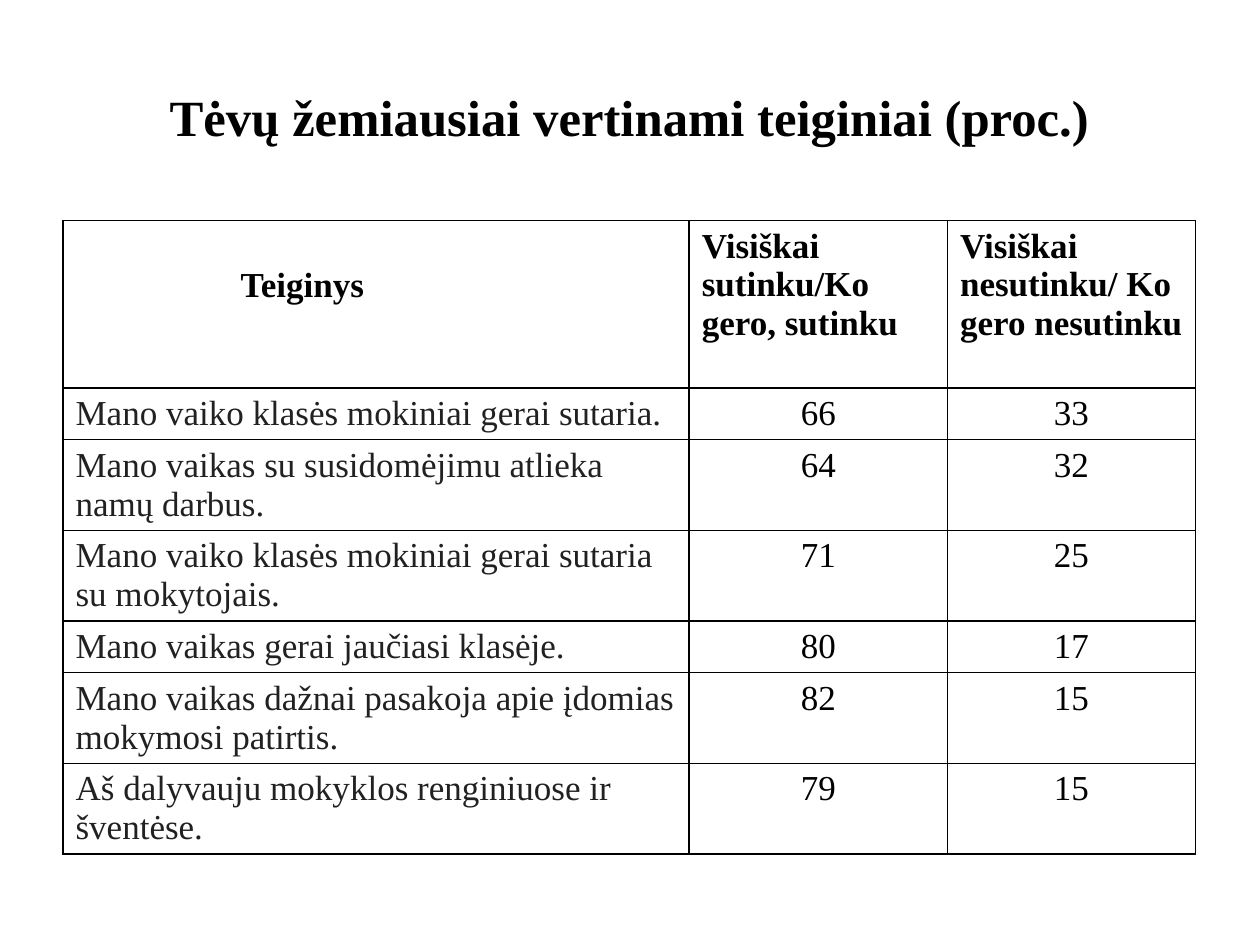
from lxml import etree
from pptx import Presentation
from pptx.dml.color import RGBColor
from pptx.enum.text import MSO_ANCHOR, PP_ALIGN
from pptx.oxml.ns import qn
from pptx.util import Inches, Pt

CENTER, LEFT = PP_ALIGN.CENTER, PP_ALIGN.LEFT
MIDDLE = MSO_ANCHOR.MIDDLE
TITLE_ONLY = 5

FONT = "Times New Roman"
COLORS = {"text": "000000", "statement": "212121", "border": "000000"}

TITLE = "Tėvų žemiausiai vertinami teiginiai (proc.)"
HEADERS = ["Teiginys", "Visiškai sutinku/Ko gero, sutinku",
           "Visiškai nesutinku/ Ko gero nesutinku"]
STATEMENTS = [
    ("Mano vaiko klasės mokiniai gerai sutaria.", 66, 33),
    ("Mano vaikas su susidomėjimu atlieka namų darbus.", 64, 32),
    ("Mano vaiko klasės mokiniai gerai sutaria su mokytojais.", 71, 25),
    ("Mano vaikas gerai jaučiasi klasėje.", 80, 17),
    ("Mano vaikas dažnai pasakoja apie įdomias mokymosi patirtis.", 82, 15),
    ("Aš dalyvauju mokyklos renginiuose ir šventėse.", 79, 15),
]
COLUMN_WIDTHS = [4.97, 2.05, 1.97]
HEADER_HEIGHT, ONE_LINE, TWO_LINES = 1.33, 0.41, 0.72
LINE_CAPACITY = 42  # characters that fit on one line of the first column


def write_text(frame, text, size, color="text", bold=False, align=LEFT):
    frame.text = text
    para = frame.paragraphs[0]
    para.alignment = align
    font = para.runs[0].font
    font.name, font.size, font.bold = FONT, Pt(size), bold
    font.color.rgb = RGBColor.from_string(COLORS[color])


def set_borders(cell):
    properties = cell._tc.get_or_add_tcPr()
    for side in ("a:lnL", "a:lnR", "a:lnT", "a:lnB"):
        line = etree.SubElement(properties, qn(side), w=str(Pt(1)))
        fill = etree.SubElement(line, qn("a:solidFill"))
        etree.SubElement(fill, qn("a:srgbClr"), val=COLORS["border"])


def fill_cell(cell, text, **style):
    set_borders(cell)
    cell.fill.background()
    write_text(cell.text_frame, text, 20, **style)


def add_title(slide):
    title = slide.shapes.title
    title.left, title.top = Inches(0.5), Inches(0.3)
    title.width, title.height = Inches(9), Inches(1.25)
    title.text_frame.vertical_anchor = MIDDLE
    write_text(title.text_frame, TITLE, 29, bold=True, align=CENTER)


def add_statement_table(slide):
    heights = [HEADER_HEIGHT] + [
        ONE_LINE if len(row[0]) < LINE_CAPACITY else TWO_LINES
        for row in STATEMENTS]
    table = slide.shapes.add_table(
        len(heights), len(COLUMN_WIDTHS), Inches(0.5), Inches(1.75),
        Inches(sum(COLUMN_WIDTHS)), Inches(sum(heights))).table
    table.first_row = table.horz_banding = False
    for column, width in zip(table.columns, COLUMN_WIDTHS):
        column.width = Inches(width)
    for row, height in zip(table.rows, heights):
        row.height = Inches(height)

    # Header row, with its first label set in and down
    for index, label in enumerate(HEADERS):
        fill_cell(table.cell(0, index), label, bold=True)
    corner = table.cell(0, 0)
    corner.margin_left, corner.margin_top = Inches(1.41), Inches(0.36)

    # Statements with their percentages
    for index, (statement, *shares) in enumerate(STATEMENTS, 1):
        fill_cell(table.cell(index, 0), statement, color="statement")
        for column, share in enumerate(shares, 1):
            fill_cell(table.cell(index, column), str(share), align=CENTER)


def main():
    deck = Presentation()
    deck.slide_width, deck.slide_height = Inches(10), Inches(7.5)
    slide = deck.slides.add_slide(deck.slide_layouts[TITLE_ONLY])
    add_title(slide)
    add_statement_table(slide)
    deck.save("out.pptx")


if __name__ == "__main__":
    main()
